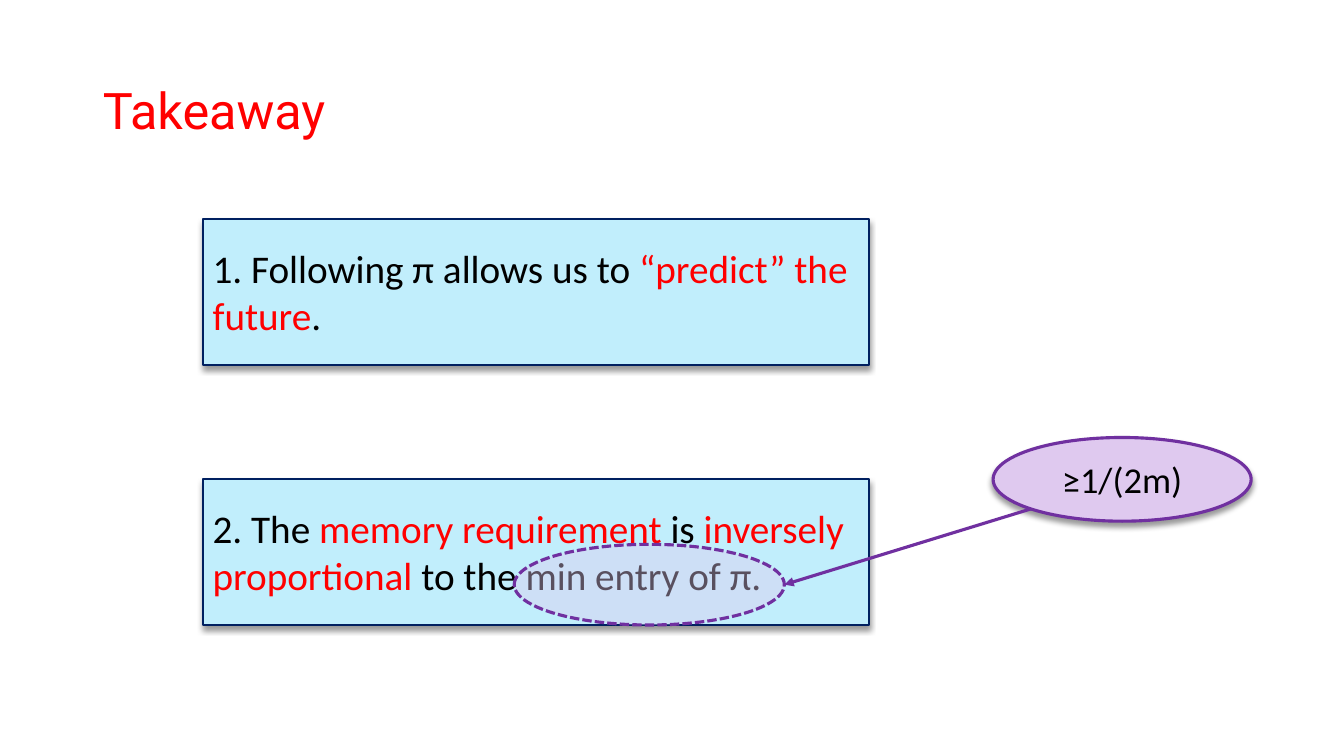
from dataclasses import dataclass
from math import sqrt

from lxml.etree import SubElement
from pptx import Presentation
from pptx.dml.color import RGBColor
from pptx.enum.dml import MSO_LINE_DASH_STYLE as DASH
from pptx.enum.shapes import MSO_CONNECTOR, MSO_SHAPE as SHAPE
from pptx.enum.text import MSO_ANCHOR, MSO_AUTO_SIZE, PP_ALIGN as ALIGN
from pptx.oxml.ns import qn
from pptx.util import Inches, Pt

BLACK = RGBColor(0x00, 0x00, 0x00)
RED = RGBColor(0xFF, 0x00, 0x00)
NAVY = RGBColor(0x00, 0x20, 0x60)
SKY = RGBColor(0xC1, 0xEE, 0xFC)
PURPLE = RGBColor(0x70, 0x30, 0xA0)
LILAC = RGBColor(0xDF, 0xC9, 0xEF)

W, H = Inches(13.33), Inches(7.5)


@dataclass(frozen=True)
class Box:
    x: float
    y: float
    w: float
    h: float

    def emu(self) -> tuple[int, int, int, int]:
        return (round(self.x * W / 100), round(self.y * H / 100),
                round(self.w * W / 100), round(self.h * H / 100))


@dataclass(frozen=True)
class Run:
    text: str
    color: RGBColor = BLACK


@dataclass(frozen=True)
class Panel:
    box: Box
    kind: SHAPE
    fill: RGBColor
    line: RGBColor
    width: float
    runs: tuple[Run, ...] = ()
    size: int = 28
    align: ALIGN = ALIGN.LEFT


def statement(top: float, *runs: Run) -> Panel:
    return Panel(Box(15.08, top, 49.59, 19.33), SHAPE.RECTANGLE, SKY, NAVY, 1.5, runs)


def oval(box: Box, *runs: Run) -> Panel:
    return Panel(box, SHAPE.OVAL, LILAC, PURPLE, 2.25, runs, 26, ALIGN.CENTER)


TITLE = Box(6.9, 5.33, 86.27, 19.33)
PREDICT = statement(28.93, Run("1. Following π allows us to "),
                    Run("“predict” the future", RED), Run("."))
MEMORY = statement(63.33, Run("2. The "), Run("memory requirement", RED), Run(" is "),
                   Run("inversely proportional", RED), Run(" to the min entry of π."))
HIGHLIGHT = oval(Box(38.26, 72, 20.1, 10.67))
CALLOUT = oval(Box(73.89, 57.87, 19.2, 11.07), Run("≥1/(2m)"))


def write(tf, runs: tuple[Run, ...], font: str, size: int, align: ALIGN) -> None:
    tf.word_wrap = True
    tf.vertical_anchor = MSO_ANCHOR.MIDDLE
    p = tf.paragraphs[0]
    p.alignment = align
    for run in runs:
        r = p.add_run()
        r.text = run.text
        r.font.name = font
        r.font.size = Pt(size)
        r.font.color.rgb = run.color


def add_panel(s, panel: Panel):
    sp = s.shapes.add_shape(panel.kind, *panel.box.emu())
    sp.shadow.inherit = False
    sp.fill.solid()
    sp.fill.fore_color.rgb = panel.fill
    sp.line.color.rgb = panel.line
    sp.line.width = Pt(panel.width)
    write(sp.text_frame, panel.runs, "Calibri", panel.size, panel.align)
    return sp


def set_alpha(color, percent: int) -> None:
    SubElement(color, qn("a:alpha"), val=str(percent * 1000))


def add_shadow(sp) -> None:
    effects = sp._element.spPr.find(qn("a:effectLst"))
    shadow = SubElement(effects, qn("a:outerShdw"), blurRad=str(Pt(4)), dist=str(Pt(3)),
                        dir=str(90 * 60000), rotWithShape="0")
    set_alpha(SubElement(shadow, qn("a:srgbClr"), val=str(BLACK)), 40)


def add_arrow(s, start: tuple[int, int], end: tuple[int, int]) -> None:
    cxn = s.shapes.add_connector(MSO_CONNECTOR.STRAIGHT, *start, *end)
    cxn.line.color.rgb = PURPLE
    cxn.line.width = Pt(2.25)
    SubElement(cxn.line._get_or_add_ln(), qn("a:tailEnd"), type="triangle")
    SubElement(cxn._element.spPr, qn("a:effectLst"))


def add_title(s) -> None:
    sp = s.shapes.title
    sp.left, sp.top, sp.width, sp.height = TITLE.emu()
    tf = sp.text_frame
    tf.auto_size = MSO_AUTO_SIZE.NONE
    write(tf, (Run("Takeaway", RED),), "Roboto", 36, ALIGN.LEFT)
    tf.paragraphs[0].line_spacing = 0.9


def main() -> None:
    prs = Presentation()
    prs.slide_width, prs.slide_height = W, H
    s = prs.slides.add_slide(prs.slide_layouts[5])
    add_title(s)

    for panel in (PREDICT, MEMORY):
        add_shadow(add_panel(s, panel))

    highlight = add_panel(s, HIGHLIGHT)
    highlight.line.dash_style = DASH.SQUARE_DOT
    set_alpha(highlight._element.spPr.find(qn("a:solidFill"))[0], 40)

    callout = add_panel(s, CALLOUT)
    add_shadow(callout)

    diagonal = sqrt(0.5) / 2
    start = (round(callout.left + callout.width * (0.5 - diagonal)),
             round(callout.top + callout.height * (0.5 + diagonal)))
    end = (highlight.left + highlight.width, highlight.top + highlight.height // 2)
    add_arrow(s, start, end)

    prs.save("out.pptx")


if __name__ == "__main__":
    main()
